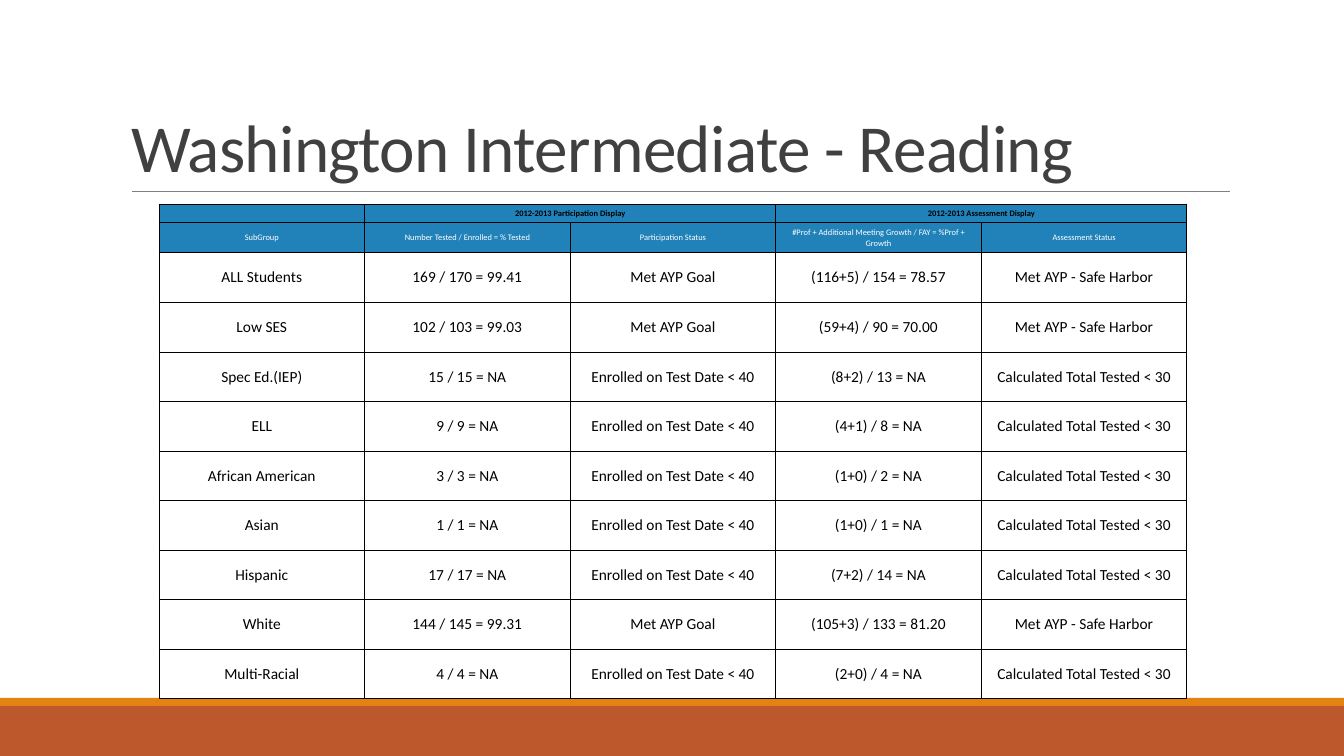
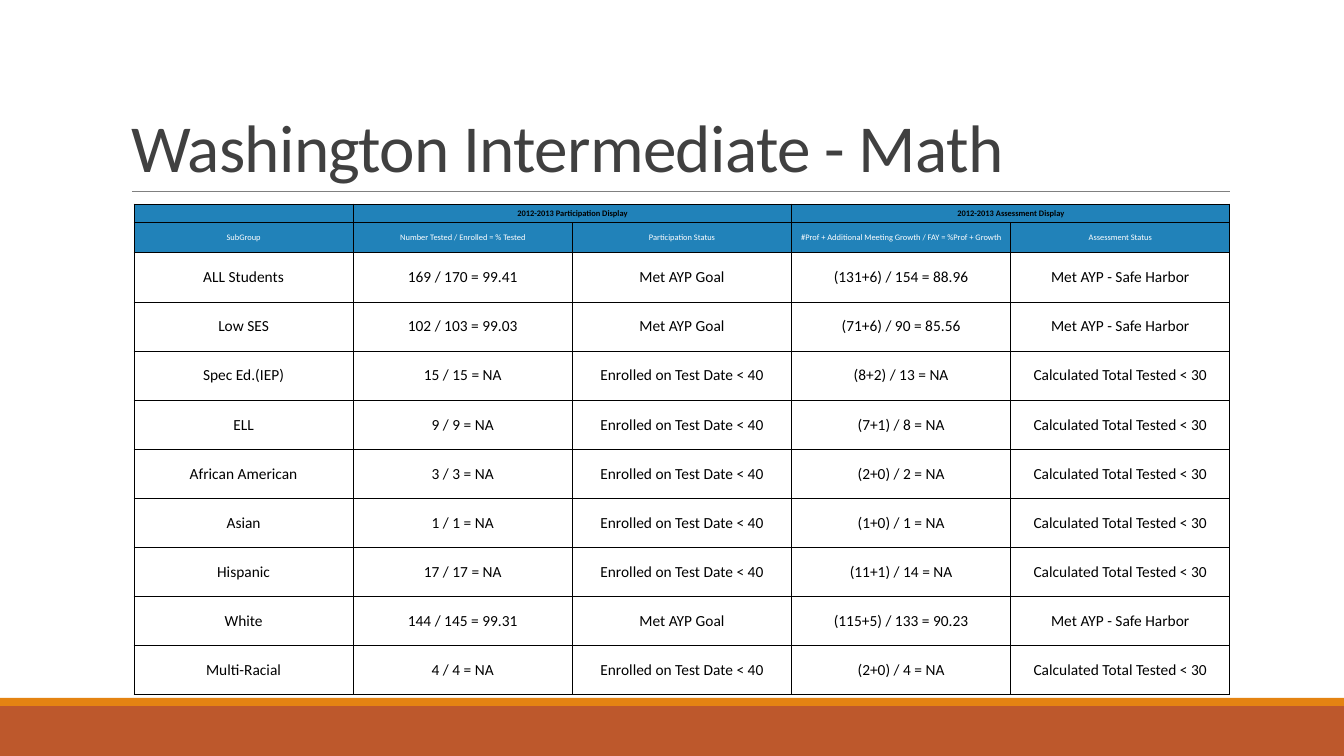
import pptx
import pptx.util
import pptx.dml.color
import pptx.enum.shapes
import pptx.enum.text
import pptx.oxml.xmlchemy
from pptx.enum.text import MSO_ANCHOR, PP_ALIGN

SCALE = 12192000 / 1344
FONT = "Calibri"
BLACK, WHITE, GRAY, RULE = "000000", "FFFFFF", "404040", "808080"
BLUE, RUST, GOLD = "2182B9", "BD582C", "E48312"

BANDS = [(706, 50, RUST), (698, 8, GOLD)]  # top, height, colour
TOP = 204
HEAD_ROWS = [19, 30]

HEADS = [
    ["", "2012-2013 Participation Display", "", "2012-2013 Assessment Display", ""],
    ["SubGroup", "Number Tested / Enrolled = % Tested", "Participation Status",
     "#Prof + Additional Meeting Growth / FAY = %Prof + Growth", "Assessment Status"],
]
MET, SAFE = "Met AYP Goal", "Met AYP - Safe Harbor"
FEW, LOW = "Enrolled on Test Date < 40", "Calculated Total Tested < 30"

# name, tested, participation status, assessment status
GROUPS = [
    ("ALL Students", "169 / 170 = 99.41", MET, SAFE),
    ("Low SES", "102 / 103 = 99.03", MET, SAFE),
    ("Spec Ed.(IEP)", "15 / 15 = NA", FEW, LOW),
    ("ELL", "9 / 9 = NA", FEW, LOW),
    ("African American", "3 / 3 = NA", FEW, LOW),
    ("Asian", "1 / 1 = NA", FEW, LOW),
    ("Hispanic", "17 / 17 = NA", FEW, LOW),
    ("White", "144 / 145 = 99.31", MET, SAFE),
    ("Multi-Racial", "4 / 4 = NA", FEW, LOW),
]
SLIDES = [
    dict(title="Washington Intermediate - Reading", left=159, width=1028, body=446,
         scores=["(116+5) / 154 = 78.57", "(59+4) / 90 = 70.00", "(8+2) / 13 = NA",
                 "(4+1) / 8 = NA", "(1+0) / 2 = NA", "(1+0) / 1 = NA",
                 "(7+2) / 14 = NA", "(105+3) / 133 = 81.20", "(2+0) / 4 = NA"]),
    dict(title="Washington Intermediate - Math", left=134, width=1096, body=442,
         scores=["(131+6) / 154 = 88.96", "(71+6) / 90 = 85.56", "(8+2) / 13 = NA",
                 "(7+1) / 8 = NA", "(2+0) / 2 = NA", "(1+0) / 1 = NA",
                 "(11+1) / 14 = NA", "(115+5) / 133 = 90.23", "(2+0) / 4 = NA"]),
]


def px(n):
    return pptx.util.Emu(round(n * SCALE))


def rgb(code):
    return pptx.dml.color.RGBColor.from_string(code)


def paint(item, code):
    item.fill.solid()
    item.fill.fore_color.rgb = rgb(code)


def node(parent, tag, **attrs):
    child = pptx.oxml.xmlchemy.OxmlElement(tag)
    for key, value in attrs.items():
        child.set(key, value)
    parent.append(child)
    return child


def write(frame, text, size=11, color=BLACK, bold=False, align=PP_ALIGN.CENTER,
          lead=None, track=None):
    """Set one formatted paragraph; an empty one still keeps its size."""
    para = frame.paragraphs[0]
    para.alignment = align
    if lead:
        para.line_spacing = lead
    if not text:
        node(para._p, "a:endParaRPr", sz=str(size * 100))
        return
    run = para.add_run()
    run.text = text
    font = run.font
    font.name, font.size, font.bold = FONT, pptx.util.Pt(size), bold
    font.color.rgb = rgb(color)
    if track:
        run._r.get_or_add_rPr().set("spc", str(track))


def edge(cell):
    """Draw thin black borders, which must come before the fill."""
    props = cell._tc.get_or_add_tcPr()
    for side in ("a:lnL", "a:lnR", "a:lnT", "a:lnB"):
        line = node(props, side, w="9525")
        node(node(line, "a:solidFill"), "a:srgbClr", val=BLACK)


def frame_slide(deck, title):
    """Add a slide with its title, rule and bottom bands."""
    slide = deck.slides.add_slide(deck.slide_layouts[5])
    head = slide.shapes.title
    head.left, head.top, head.width, head.height = map(px, (121, 31, 1109, 160))
    head.text_frame.word_wrap = True
    head.text_frame.auto_size = pptx.enum.text.MSO_AUTO_SIZE.NONE
    head.text_frame.vertical_anchor = MSO_ANCHOR.BOTTOM
    write(head.text_frame, title, size=48, color=GRAY, align=PP_ALIGN.LEFT,
          lead=0.85, track=-50)
    for top, height, color in BANDS:
        band = slide.shapes.add_shape(pptx.enum.shapes.MSO_SHAPE.RECTANGLE,
                                      0, px(top), deck.slide_width, px(height))
        band.shadow.inherit = False
        paint(band, color)
        band.line.fill.background()
    rule = slide.shapes.add_connector(pptx.enum.shapes.MSO_CONNECTOR.STRAIGHT,
                                      px(132), px(191), px(1230), px(191))
    rule.line.color.rgb = rgb(RULE)
    rule.line.width = pptx.util.Pt(0.5)
    node(rule._element.spPr, "a:effectLst")
    return slide


def add_grid(slide, left, width, body, scores):
    rows = HEADS + [[name, tested, part, score, status]
                    for (name, tested, part, status), score in zip(GROUPS, scores)]
    heights = HEAD_ROWS + [body / len(GROUPS)] * len(GROUPS)
    cols = len(HEADS[0])
    table = slide.shapes.add_table(len(rows), cols, px(left), px(TOP),
                                   px(width), px(sum(heights))).table
    table.first_row = table.horz_banding = False
    for col in table.columns:
        col.width = px(width / cols)
    for r, (row, height) in enumerate(zip(rows, heights)):
        table.rows[r].height = px(height)
        is_head = r < len(HEADS)
        for c, text in enumerate(row):
            cell = table.cell(r, c)
            cell.margin_left = cell.margin_right = px(6)
            cell.margin_top = cell.margin_bottom = px(3)
            cell.vertical_anchor = MSO_ANCHOR.MIDDLE
            edge(cell)
            paint(cell, BLUE if is_head else WHITE)
            write(cell.text_frame, text, size=6 if is_head else 11,
                  color=WHITE if r == 1 else BLACK, bold=r == 0)
    for c in (1, 3):
        table.cell(0, c).merge(table.cell(0, c + 1))


def main():
    deck = pptx.Presentation()
    deck.slide_width, deck.slide_height = px(1344), px(756)
    for page in SLIDES:
        slide = frame_slide(deck, page["title"])
        add_grid(slide, page["left"], page["width"], page["body"], page["scores"])
    deck.save("out.pptx")


if __name__ == "__main__":
    main()
